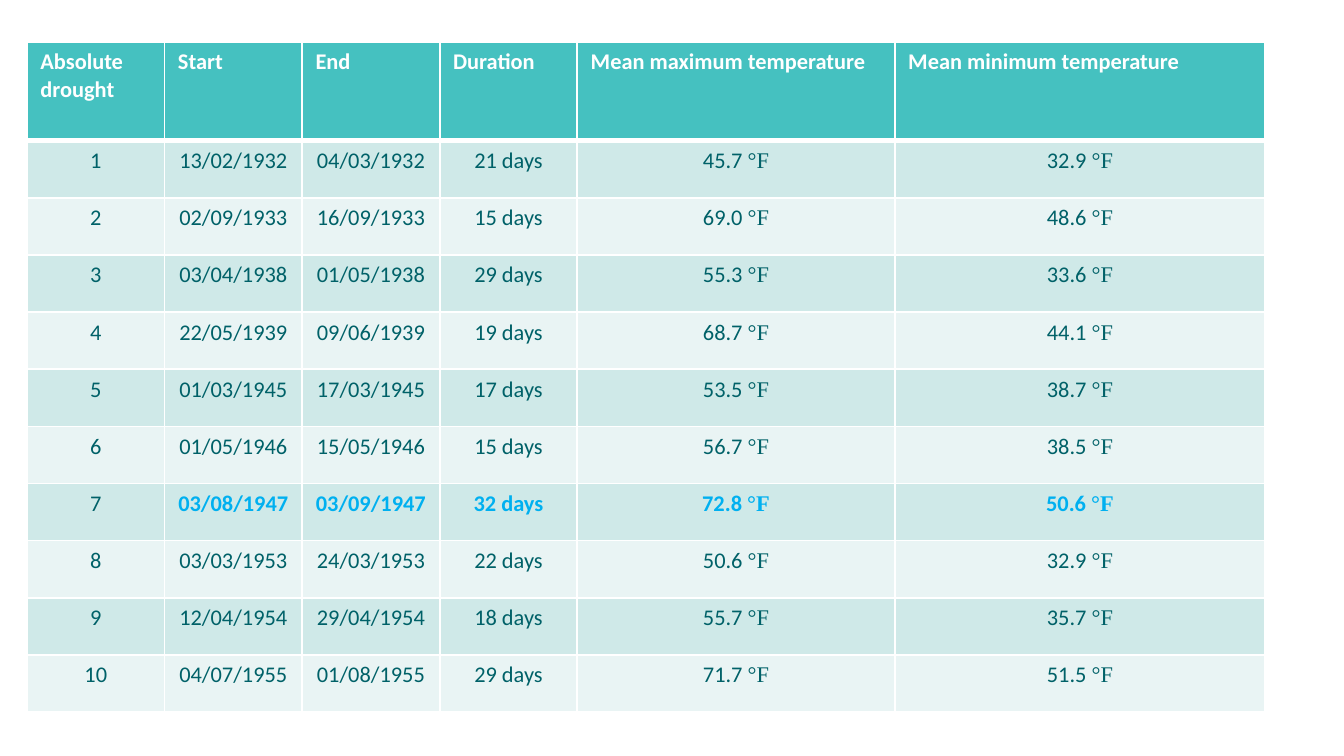
from lxml.etree import SubElement
from pptx import Presentation
from pptx.dml.color import RGBColor
from pptx.enum.text import PP_ALIGN
from pptx.oxml.ns import qn
from pptx.util import Cm, Pt

HEADINGS = ["Absolute drought", "Start", "End", "Duration",
            "Mean maximum temperature", "Mean minimum temperature"]
# start, end, days, mean maximum and mean minimum in °F
DROUGHTS = [
    ("13/02/1932", "04/03/1932", 21, 45.7, 32.9),
    ("02/09/1933", "16/09/1933", 15, 69.0, 48.6),
    ("03/04/1938", "01/05/1938", 29, 55.3, 33.6),
    ("22/05/1939", "09/06/1939", 19, 68.7, 44.1),
    ("01/03/1945", "17/03/1945", 17, 53.5, 38.7),
    ("01/05/1946", "15/05/1946", 15, 56.7, 38.5),
    ("03/08/1947", "03/09/1947", 32, 72.8, 50.6),
    ("03/03/1953", "24/03/1953", 22, 50.6, 32.9),
    ("12/04/1954", "29/04/1954", 18, 55.7, 35.7),
    ("04/07/1955", "01/08/1955", 29, 71.7, 51.5),
]
COLUMN_WIDTHS = [2.6, 2.6, 2.6, 2.6, 6, 7]
HEADER_HEIGHT, ROW_HEIGHT = 1.87, 1.08
LONGEST_DROUGHT = 7
WHITE, TEAL, DARK_TEAL, BLUE = "FFFFFF", "45C1C0", "006168", "00B0F0"
BANDS = ["E9F4F4", "CFE9E8"]


def color(value):
    return RGBColor.from_string(value)


def style_cell(cell, fill, top, bottom):
    """Fill a cell and give it white borders; top and bottom are in points."""
    properties = cell._tc.get_or_add_tcPr()
    for side, width in (("L", 1), ("R", 1), ("T", top), ("B", bottom)):
        line = SubElement(properties, qn(f"a:ln{side}"), w=str(Pt(width)))
        solid = SubElement(line, qn("a:solidFill"))
        SubElement(solid, qn("a:srgbClr"), val=WHITE)
    cell.fill.solid()
    cell.fill.fore_color.rgb = color(fill)


deck = Presentation()
deck.slide_width, deck.slide_height = Cm(25.4), Cm(14.29)
page = deck.slides.add_slide(deck.slide_layouts[6])

table = page.shapes.add_table(
    len(DROUGHTS) + 1, len(HEADINGS), Cm(0.51), Cm(0.79),
    Cm(sum(COLUMN_WIDTHS)), Cm(HEADER_HEIGHT + ROW_HEIGHT * len(DROUGHTS))).table
for column, width in zip(table.columns, COLUMN_WIDTHS):
    column.width = Cm(width)

# Every cell is a list of text pieces, one for each run.
rows = [[[heading] for heading in HEADINGS]]
for number, (start, end, days, maximum, minimum) in enumerate(DROUGHTS, 1):
    rows.append([[str(number)], [start], [end], [f"{days} days"],
                 [f"{maximum:.1f} ", "°F"], [f"{minimum:.1f} ", "°F"]])

for row_index, row in enumerate(rows):
    is_header = row_index == 0
    table.rows[row_index].height = Cm(HEADER_HEIGHT if is_header else ROW_HEIGHT)
    for column_index, pieces in enumerate(row):
        is_longest = row_index == LONGEST_DROUGHT and column_index > 0
        cell = table.cell(row_index, column_index)
        style_cell(cell, TEAL if is_header else BANDS[row_index % 2],
                   top=3 if row_index == 1 else 1, bottom=3 if is_header else 1)
        para = cell.text_frame.paragraphs[0]
        para.alignment = PP_ALIGN.LEFT if is_header else PP_ALIGN.CENTER
        for piece in pieces:
            span = para.add_run()
            span.text = piece
            span.font.name = "Times New Roman" if piece == "°F" else "Calibri"
            span.font.size = Pt(12)
            span.font.bold = is_header or is_longest
            span.font.color.rgb = color(
                WHITE if is_header else BLUE if is_longest else DARK_TEAL)

deck.save("out.pptx")
